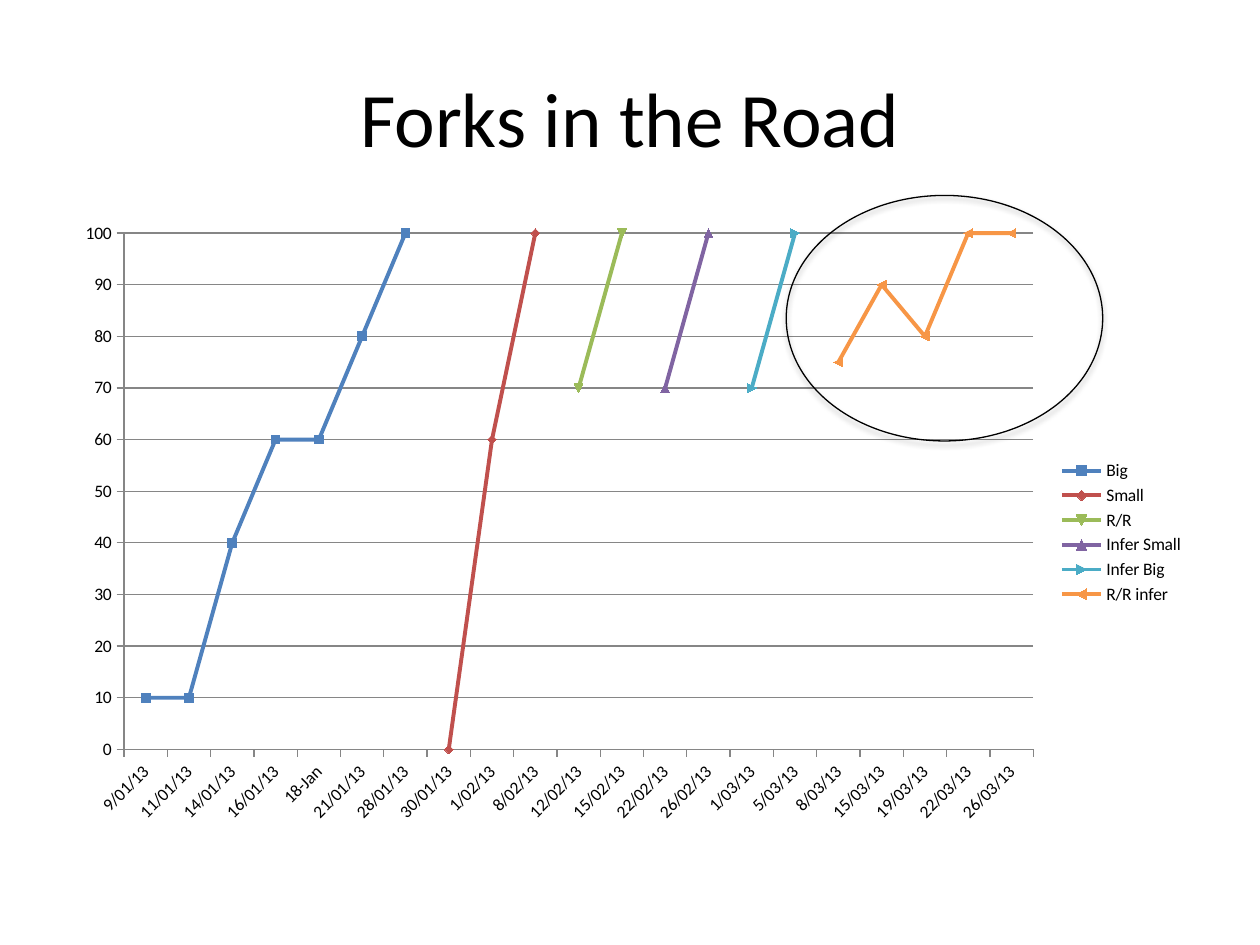
from lxml import etree
from pptx import Presentation
from pptx.chart.data import CategoryChartData
from pptx.dml.color import RGBColor
from pptx.enum.chart import XL_CHART_TYPE, XL_LEGEND_POSITION, XL_TICK_MARK
from pptx.enum.shapes import MSO_SHAPE
from pptx.enum.text import MSO_ANCHOR, PP_ALIGN
from pptx.oxml.ns import qn
from pptx.util import Cm, Pt

LINES = XL_CHART_TYPE.LINE_MARKERS
RIGHT = XL_LEGEND_POSITION.RIGHT
OUT = XL_TICK_MARK.OUTSIDE
NONE = XL_TICK_MARK.NONE
OVAL = MSO_SHAPE.OVAL
MIDDLE = MSO_ANCHOR.MIDDLE
CENTER = PP_ALIGN.CENTER

FONT = "Calibri"
BLACK = RGBColor(0, 0, 0)
GRAY = RGBColor(0x86, 0x86, 0x86)
BLUE = RGBColor(0x4F, 0x81, 0xBD)
RED = RGBColor(0xC0, 0x50, 0x4D)
GREEN = RGBColor(0x9B, 0xBB, 0x59)
PURPLE = RGBColor(0x80, 0x64, 0xA2)
TEAL = RGBColor(0x4B, 0xAC, 0xC6)
ORANGE = RGBColor(0xF7, 0x96, 0x46)

WIDTH, HEIGHT = Cm(22.86), Cm(12.57)
DATES = [
    "9/01/13", "11/01/13", "14/01/13", "16/01/13", "18-Jan", "21/01/13", "28/01/13",
    "30/01/13", "1/02/13", "8/02/13", "12/02/13", "15/02/13", "22/02/13", "26/02/13",
    "1/03/13", "5/03/13", "8/03/13", "15/03/13", "19/03/13", "22/03/13", "26/03/13",
]
RUNS = [
    ("Big", BLUE, [10, 10, 40, 60, 60, 80, 100]),
    ("Small", RED, [0, 60, 100]),
    ("R/R", GREEN, [70, 100]),
    ("Infer Small", PURPLE, [70, 100]),
    ("Infer Big", TEAL, [70, 100]),
    ("R/R infer", ORANGE, [75, 90, 80, 100, 100]),
]


def set_font(font, size):
    font.name = FONT
    font.size = Pt(size)
    font.color.rgb = BLACK


def set_line(line, color, width):
    line.color.rgb = color
    line.width = Pt(width)


def add_title(slide, text):
    box = slide.shapes.add_textbox(Cm(1.27), Cm(0.76), Cm(22.86), Cm(3.18))
    frame = box.text_frame
    frame.word_wrap = True
    frame.vertical_anchor = MIDDLE
    para = frame.paragraphs[0]
    para.alignment = CENTER
    run = para.add_run()
    run.text = text
    set_font(run.font, 44)


def make_data():
    data = CategoryChartData()
    data.categories = DATES
    start = 0
    for name, _, vals in RUNS:
        after = len(DATES) - start - len(vals)
        data.add_series(name, [None] * start + vals + [None] * after)
        start += len(vals)
    return data


def style_axis(axis):
    axis.major_tick_mark = OUT
    axis.minor_tick_mark = NONE
    set_font(axis.tick_labels.font, 10)
    set_line(axis.format.line, GRAY, 0.75)


def place_plot(chart, left, top, width, height):
    area = chart._chartSpace.find(".//" + qn("c:plotArea"))
    for old in area.findall(qn("c:layout")):
        area.remove(old)
    layout = etree.Element(qn("c:layout"))
    area.insert(0, layout)
    manual = etree.SubElement(layout, qn("c:manualLayout"))
    parts = [
        ("layoutTarget", "inner"), ("xMode", "edge"), ("yMode", "edge"),
        ("x", left / WIDTH), ("y", top / HEIGHT),
        ("w", width / WIDTH), ("h", height / HEIGHT),
    ]
    for name, val in parts:
        etree.SubElement(manual, qn("c:" + name), val=str(val))


def add_chart(slide):
    chart = slide.shapes.add_chart(
        LINES, Cm(1.27), Cm(4.45), WIDTH, HEIGHT, make_data()
    ).chart
    set_font(chart.font, 10)
    chart.has_title = False
    chart.has_legend = True
    chart.legend.position = RIGHT
    chart.legend.include_in_layout = False
    set_font(chart.legend.font, 10)
    place_plot(chart, Cm(1.23), Cm(0.25), Cm(18.33), Cm(10.41))

    dates, scale = chart.category_axis, chart.value_axis
    for axis in (dates, scale):
        style_axis(axis)
    dates.has_major_gridlines = False
    body = dates.tick_labels.font._element.getparent().getparent().getparent()
    body.find(qn("a:bodyPr")).set("rot", "-2700000")
    scale.minimum_scale = 0
    scale.maximum_scale = 100
    scale.major_unit = 10
    scale.has_major_gridlines = True
    set_line(scale.major_gridlines.format.line, GRAY, 0.75)

    plot = chart.plots[0]
    plot.vary_by_categories = False
    for series, (_, color, _) in zip(plot.series, RUNS):
        series.smooth = False
        set_line(series.format.line, color, 2.25)
        mark = series.marker.format
        mark.fill.solid()
        mark.fill.fore_color.rgb = color
        set_line(mark.line, color, 0.75)


def add_shadow(shape):
    shape.shadow.inherit = False
    effects = shape._element.spPr.find(qn("a:effectLst"))
    outer = etree.SubElement(
        effects, qn("a:outerShdw"), blurRad=str(Pt(3.1)), dist=str(Pt(1.8)),
        dir="5400000", rotWithShape="0",
    )
    color = etree.SubElement(outer, qn("a:srgbClr"), val=str(BLACK))
    etree.SubElement(color, qn("a:alpha"), val="35000")


def add_ring(slide):
    ring = slide.shapes.add_shape(OVAL, Cm(15.85), Cm(3.94), Cm(6.38), Cm(4.95))
    ring.fill.background()
    set_line(ring.line, BLACK, 0.75)
    add_shadow(ring)


def main():
    deck = Presentation()
    deck.slide_width = Cm(25.4)
    deck.slide_height = Cm(19.05)
    slide = deck.slides.add_slide(deck.slide_layouts[6])
    add_title(slide, "Forks in the Road")
    add_chart(slide)
    add_ring(slide)
    deck.save("out.pptx")


if __name__ == "__main__":
    main()
